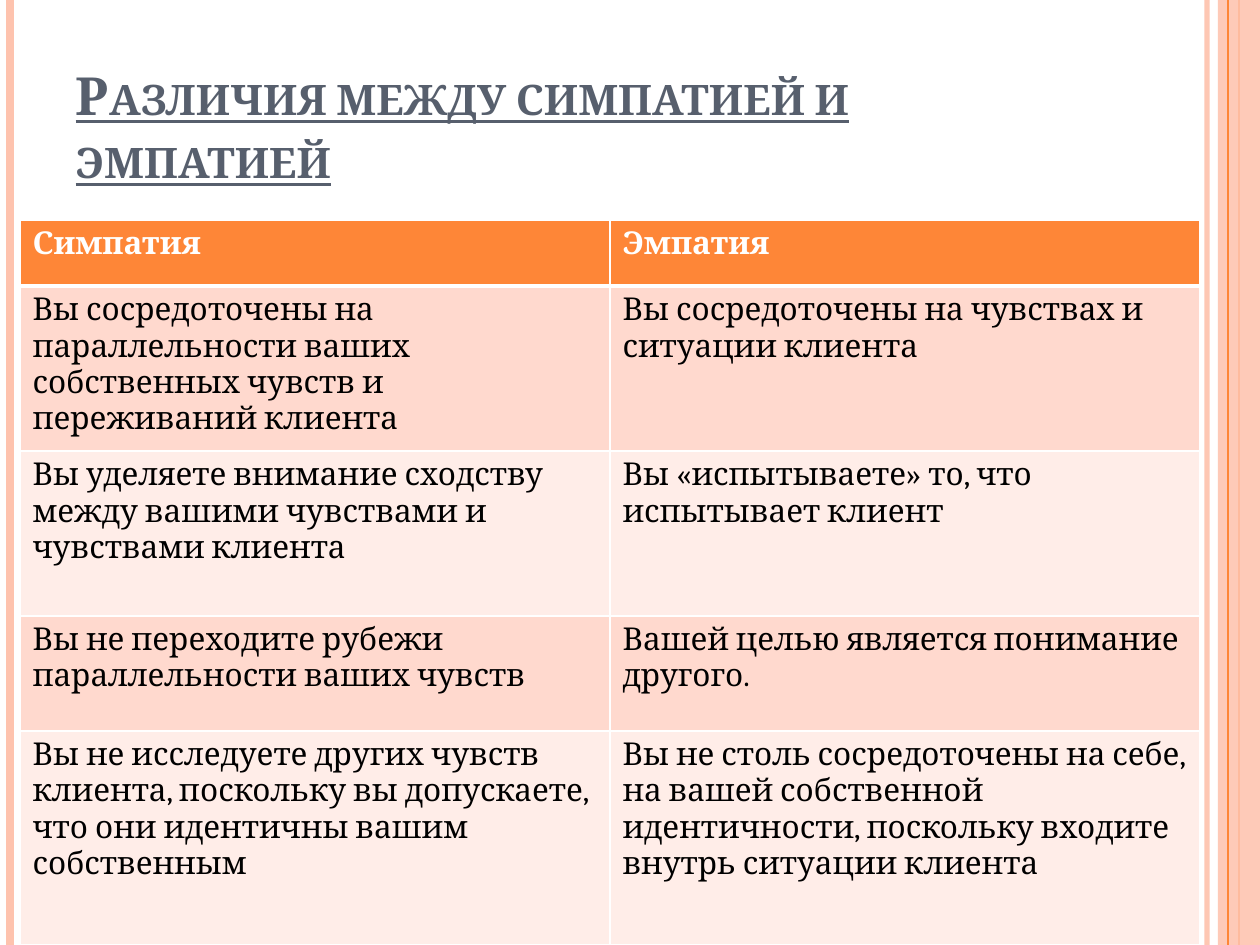
from dataclasses import dataclass

import lxml.etree
import pptx
import pptx.dml.color
import pptx.enum.shapes
import pptx.enum.text
import pptx.oxml.ns
import pptx.util

PX = 914400 / 126
WIDTH, HEIGHT = 1260, 945
FONT = "Cambria"
COLORS = {
    "white": "FFFFFF",
    "black": "000000",
    "title": "575F6D",
    "orange": "FE8637",
    "peach": "FEC3AE",
    "band_dark": "FFD9CE",
    "band_light": "FFEDE8",
}


@dataclass
class Stripe:
    x: int
    weight: float
    color: str
    opacity: int = 100


@dataclass
class Row:
    height: int
    sympathy: str
    empathy: str


BACK_STRIPES = [
    Stripe(1207, 3, "peach", 93),
    Stripe(10, 4.5, "peach"),
    Stripe(1239, 1.5, "orange"),
]
FRONT_STRIPE = Stripe(1228, 0.75, "orange")
ROWS = [
    Row(66, "Симпатия", "Эмпатия"),
    Row(165, "Вы сосредоточены на параллельности ваших собственных чувств и переживаний клиента",
        "Вы сосредоточены на чувствах и ситуации клиента"),
    Row(165, "Вы уделяете внимание сходству между вашими чувствами и чувствами клиента",
        "Вы «испытываете» то, что испытывает клиент"),
    Row(115, "Вы не переходите рубежи параллельности ваших чувств",
        "Вашей целью является понимание другого."),
    Row(214, "Вы не исследуете других чувств клиента, поскольку вы допускаете, "
        "что они идентичны вашим собственным",
        "Вы не столь сосредоточены на себе, на вашей собственной идентичности, "
        "поскольку входите внутрь ситуации клиента"),
]


def px(value: int) -> int:
    return pptx.util.Emu(round(value * PX))


def rgb(name: str) -> pptx.dml.color.RGBColor:
    return pptx.dml.color.RGBColor.from_string(COLORS[name])


def sub(parent, tag: str, **attrs: str):
    return lxml.etree.SubElement(parent, pptx.oxml.ns.qn(tag), attrs)


def set_opacity(sp, percent: int) -> None:
    color = next(sp._element.spPr.iter(pptx.oxml.ns.qn("a:srgbClr")))
    sub(color, "a:alpha", val=str(percent * 1000))


def add_run(p, text: str, size: int, color: str, bold: bool):
    r = p.add_run()
    r.text = text
    r.font.name = FONT
    r.font.size = pptx.util.Pt(size)
    r.font.bold = bold
    r.font.color.rgb = rgb(color)
    return r


def add_stripe(s, stripe: Stripe) -> None:
    line = s.shapes.add_connector(
        pptx.enum.shapes.MSO_CONNECTOR.STRAIGHT, px(stripe.x), 0, px(stripe.x), px(HEIGHT))
    line.line.width = pptx.util.Pt(stripe.weight)
    line.line.color.rgb = rgb(stripe.color)
    if stripe.opacity < 100:
        set_opacity(line, stripe.opacity)
    sub(line._element.spPr, "a:effectLst")


def add_side_panel(s) -> None:
    left = 1218
    sp = s.shapes.add_shape(
        pptx.enum.shapes.MSO_SHAPE.RECTANGLE, px(left), 0, px(WIDTH - left), px(HEIGHT))
    sp.shadow.inherit = False
    sp.fill.solid()
    sp.fill.fore_color.rgb = rgb("peach")
    set_opacity(sp, 87)
    sp.line.fill.background()


def fill_title(s) -> None:
    title = s.shapes.title
    title.left, title.top, title.width, title.height = px(63), px(38), px(1029), px(157)
    tf = title.text_frame
    tf.word_wrap = True
    tf.vertical_anchor = pptx.enum.text.MSO_ANCHOR.BOTTOM
    p = tf.paragraphs[0]
    p.alignment = pptx.enum.text.PP_ALIGN.LEFT
    r = add_run(p, "Различия между симпатией и эмпатией", 30, "title", True)
    r.font.underline = True
    r._r.get_or_add_rPr().set("cap", "small")


def set_borders(cell, is_header: bool, below_header: bool) -> None:
    tcPr = cell._tc.get_or_add_tcPr()
    weights = {"L": 1, "R": 1, "T": 3 if below_header else 1, "B": 3 if is_header else 1}
    for side, weight in weights.items():
        ln = sub(tcPr, f"a:ln{side}", w=str(pptx.util.Pt(weight)))
        sub(sub(ln, "a:solidFill"), "a:srgbClr", val=COLORS["white"])


def add_comparison_table(s) -> None:
    height = sum(row.height for row in ROWS)
    table = s.shapes.add_table(
        len(ROWS), 2, px(20), px(HEIGHT - height), px(1180), px(height)).table
    for i, row in enumerate(ROWS):
        table.rows[i].height = px(row.height)
        header = i == 0
        fill = "orange" if header else ("band_light", "band_dark")[i % 2]
        for j, text in enumerate((row.sympathy, row.empathy)):
            cell = table.cell(i, j)
            set_borders(cell, header, i == 1)
            cell.fill.solid()
            cell.fill.fore_color.rgb = rgb(fill)
            add_run(cell.text_frame.paragraphs[0], text, 18,
                    "white" if header else "black", header)


def main() -> None:
    prs = pptx.Presentation()
    prs.slide_width, prs.slide_height = px(WIDTH), px(HEIGHT)
    s = prs.slides.add_slide(prs.slide_layouts[5])
    s.background.fill.solid()
    s.background.fill.fore_color.rgb = rgb("white")
    for stripe in BACK_STRIPES:
        add_stripe(s, stripe)
    add_side_panel(s)
    add_stripe(s, FRONT_STRIPE)
    fill_title(s)
    add_comparison_table(s)
    prs.save("out.pptx")


if __name__ == "__main__":
    main()
